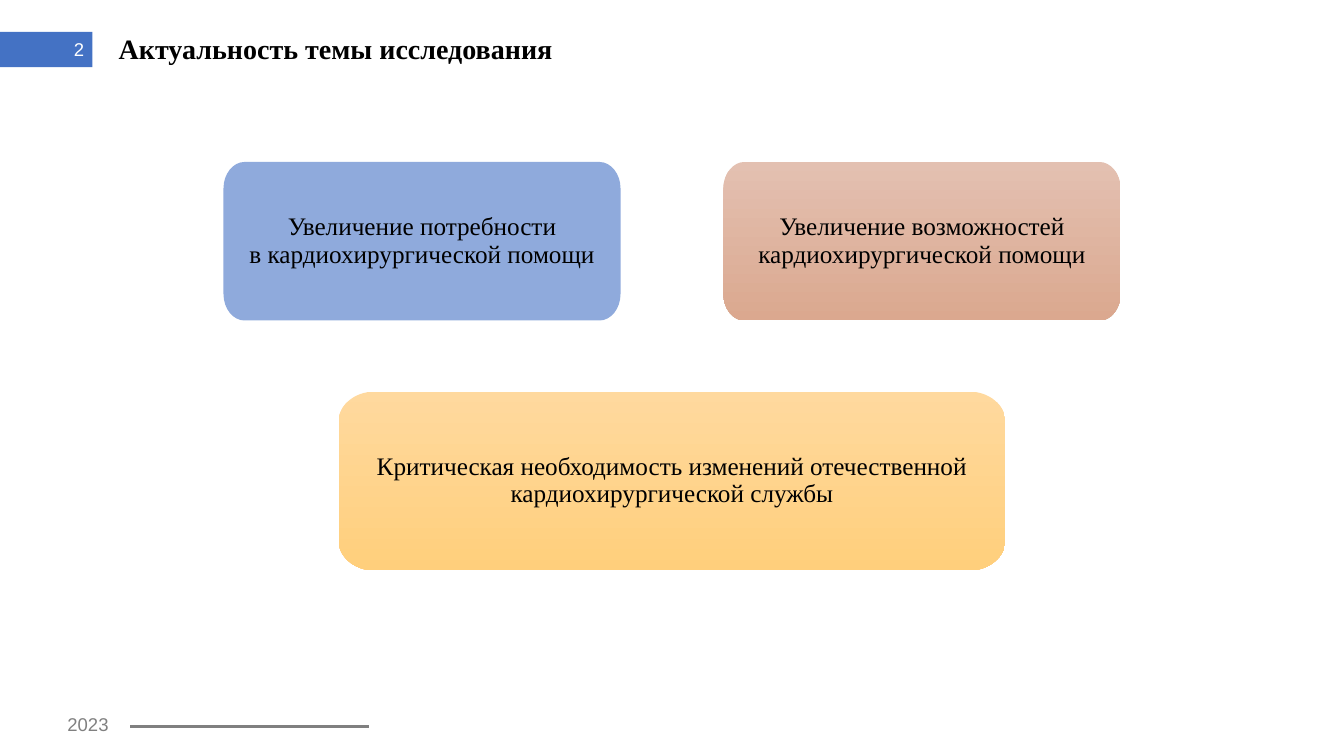
"""Builds the slide on the relevance of the research topic."""
from lxml import etree
from pptx import Presentation
from pptx.dml.color import RGBColor
from pptx.enum.shapes import MSO_CONNECTOR, MSO_SHAPE
from pptx.enum.text import MSO_ANCHOR, PP_ALIGN
from pptx.oxml.ns import qn
from pptx.util import Inches, Pt

LEFT, CENTER, RIGHT = PP_ALIGN.LEFT, PP_ALIGN.CENTER, PP_ALIGN.RIGHT
TOP, MIDDLE = MSO_ANCHOR.TOP, MSO_ANCHOR.MIDDLE
RECT, STRAIGHT = MSO_SHAPE.RECTANGLE, MSO_CONNECTOR.STRAIGHT
SANS, SERIF = "Arial", "Times New Roman"
BLACK, GREY, WHITE, BLUE = "000000", "808080", "FFFFFF", "4472C4"

prs = Presentation()
prs.slide_width, prs.slide_height = Inches(13.33), Inches(7.5)
COL, ROW = prs.slide_width / 100, prs.slide_height / 100
s = prs.slides.add_slide(prs.slide_layouts[6])


def rgb(value):
    """Turn a hex string into a colour."""
    return RGBColor.from_string(value)


def write(sp, lines, font, size, color, align, anchor, margins, spacing=1.0, bold=False):
    """Fill a shape with one paragraph of the given lines."""
    tf = sp.text_frame
    tf.word_wrap = True
    tf.vertical_anchor = anchor
    tf.margin_left, tf.margin_top, tf.margin_right, tf.margin_bottom = map(Inches, margins)
    p = tf.paragraphs[0]
    p.alignment, p.line_spacing = align, spacing
    for i, line in enumerate(lines):
        if i:
            p.add_line_break()
        r = p.add_run()
        r.text = line
        r.font.name, r.font.size, r.font.bold = font, Pt(size), bold
        r.font.color.rgb = rgb(color)


bar = s.shapes.add_shape(RECT, 0, int(4.23 * ROW), int(6.88 * COL), int(4.67 * ROW))
bar.shadow.inherit = False
bar.fill.solid()
bar.fill.fore_color.rgb = rgb(BLUE)
bar.line.fill.background()

rule = s.shapes.add_connector(STRAIGHT, int(9.7 * COL), int(96.1 * ROW),
                              int(27.45 * COL), int(96.1 * ROW))
rule.line.color.rgb = rgb(GREY)
rule.line.width = Pt(1.5)
etree.SubElement(rule._element.spPr, qn("a:effectLst"))

INSETS = (0.1, 0.05, 0.1, 0.05)
labels = [
    ("2023", 4.28, 93.7, 4.7, 4.3, SANS, 13.2, GREY, LEFT, TOP, INSETS, 1.0, False),
    ("2", -0.2, 3.9, 7.2, 5.3, SANS, 13.2, WHITE, RIGHT, MIDDLE, INSETS, 1.0, False),
    ("Актуальность темы исследования", 7.33, 3.5, 76.5, 6.27,
     SERIF, 20, BLACK, LEFT, MIDDLE, (0.2, 0, 0, 0), 0.9, True),
]
for text, x, y, w, h, *style in labels:
    tb = s.shapes.add_textbox(int(x * COL), int(y * ROW), int(w * COL), int(h * ROW))
    write(tb, [text], *style)

CARD_W, GAP = 29.54, 7.66
WIDE_W = 49.6
BEND = 0.55
cards = [
    (["Увеличение потребности", "в кардиохирургической помощи"],
     50 - GAP / 2 - CARD_W, 21.42, CARD_W, 20.97, 1.57, 3.5, ["8FAADC"]),
    (["Увеличение возможностей", "кардиохирургической помощи"],
     50 + GAP / 2, 21.42, CARD_W, 20.97, 1.57, 3.5, ["E3C0B1", "DBA88F"]),
    (["Критическая необходимость изменений отечественной кардиохирургической службы"],
     50 - WIDE_W / 2, 51.8, WIDE_W, 23.65, 2.67, 3.95, ["FFD99E", "FFCF7C"]),
]
for lines, x, y, w, h, rx, ry, colors in cards:
    right, bottom = x + w, y + h
    points = [(round(px * COL), round(py * ROW)) for px, py in [
        (x, y + ry), (x + rx, y), (right - rx, y), (right, y + ry),
        (right, bottom - ry), (right - rx, bottom), (x + rx, bottom), (x, bottom - ry)]]
    outline = s.shapes.build_freeform(*points[0])
    outline.add_line_segments(points[1:], close=True)
    sp = outline.convert_to_shape()
    edges = list(sp._element.iter(qn("a:lnTo")))
    for i in range(0, 8, 2):
        (ax, ay), (bx, by) = points[i], points[i + 1]
        cx, cy = (ax, by) if i % 4 == 0 else (bx, ay)
        curve = etree.Element(qn("a:cubicBezTo"))
        for px, py in [(ax + BEND * (cx - ax), ay + BEND * (cy - ay)),
                       (bx + BEND * (cx - bx), by + BEND * (cy - by)), (bx, by)]:
            etree.SubElement(curve, qn("a:pt"), x=str(round(px - sp.left)),
                             y=str(round(py - sp.top)))
        edges[i].getparent().replace(edges[i], curve)
    sp.shadow.inherit = False
    sp.line.fill.background()
    if len(colors) == 1:
        sp.fill.solid()
        sp.fill.fore_color.rgb = rgb(colors[0])
    else:
        sp.fill.gradient()
        sp.fill.gradient_angle = 270
        for stop, color in zip(sp.fill.gradient_stops, colors):
            stop.color.rgb = rgb(color)
    write(sp, lines, SERIF, 18, BLACK, CENTER, MIDDLE, (0.16, 0.12, 0.16, 0.12), 0.9)

prs.save("out.pptx")
